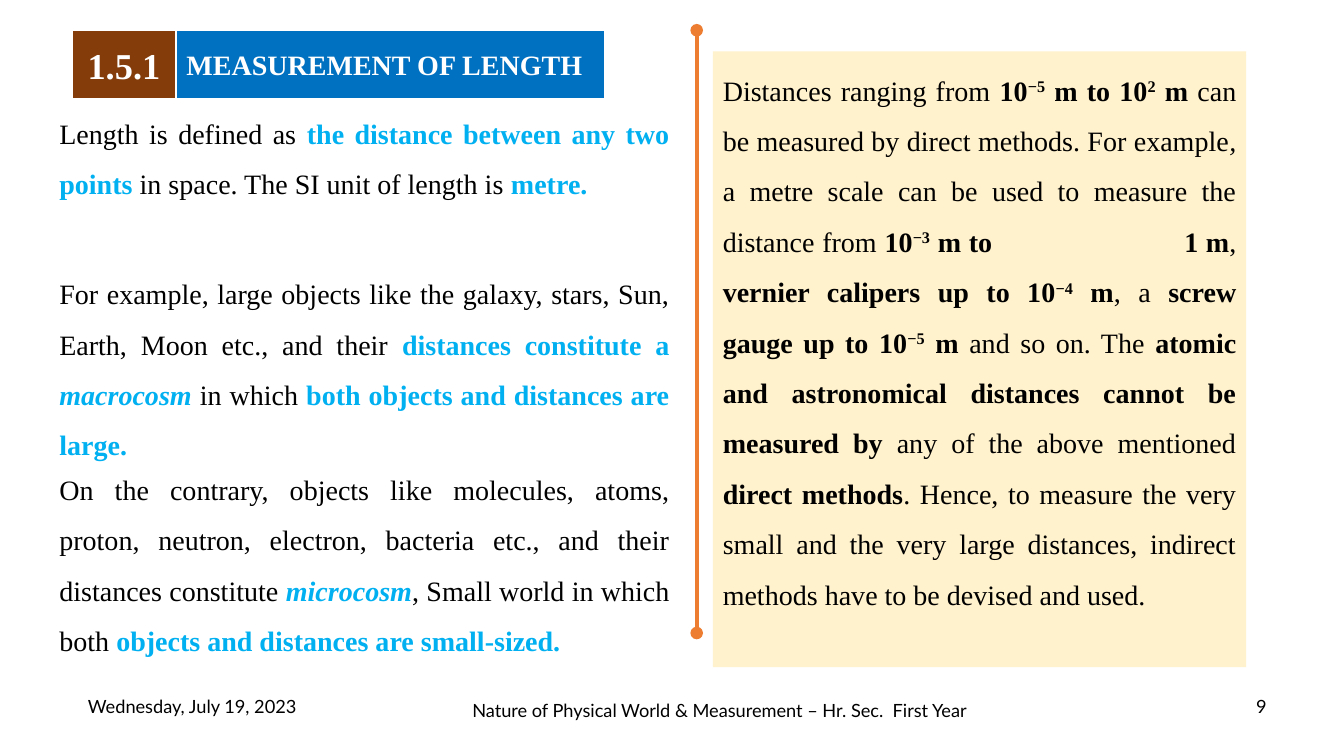
"""Build the slide on measurement of length."""
from lxml.etree import SubElement
from pptx import Presentation
from pptx.dml.color import RGBColor as RGB
from pptx.enum.shapes import MSO_CONNECTOR as Link, MSO_SHAPE as Shape
from pptx.enum.text import MSO_ANCHOR as Anchor, PP_ALIGN as Align
from pptx.oxml.ns import qn
from pptx.util import Inches, Pt

HUES = {"black": "000000", "white": "FFFFFF", "brown": "843C0B", "blue": "0070C0",
        "cyan": "00B0F0", "cream": "FFF2CC", "orange": "ED7D31"}
SERIF = "Times New Roman"


def hue(name):
    return RGB.from_string(HUES[name])


def write(shape, runs, size, face=SERIF, color="black", align=Align.JUSTIFY):
    """Fill a shape with runs marked b (bold), i (italic), c (cyan), s (superscript)."""
    para = shape.text_frame.paragraphs[0]
    para.alignment = align
    para.font.size, para.font.name = Pt(size), face
    para.font.color.rgb = hue(color)
    for text, marks in runs:
        run = para.add_run()
        run.text = text
        if "b" in marks:
            run.font.bold = True
        if "i" in marks:
            run.font.italic = True
        if "c" in marks:
            run.font.color.rgb = hue("cyan")
        if "s" in marks:
            run.font._element.set("baseline", "30000")
    return para


deck = Presentation()
deck.slide_width, deck.slide_height = Inches(13.33), Inches(7.5)
slide = deck.slides.add_slide(deck.slide_layouts[6])
shapes = slide.shapes

footer = [
    (0.71, 6.81, 2.39, "Wednesday, July 19, 2023"),
    (12.3, 6.81, 0.42, "9"),
    (4.55, 6.85, 5.17, "Nature of Physical World & Measurement – Hr. Sec.  First Year"),
]
for left, top, width, text in footer:
    box = shapes.add_textbox(Inches(left), Inches(top), Inches(width), Inches(0.4))
    box.text_frame.word_wrap = False
    box.text_frame.vertical_anchor = Anchor.MIDDLE
    write(box, [(text, "")], 13, "Lato", align=Align.CENTER)

rule = shapes.add_connector(Link.STRAIGHT, Inches(6.91), Inches(0.3), Inches(6.91), Inches(6.28))
rule.line.color.rgb = hue("orange")
rule.line.width = Pt(3)
line = rule.line._get_or_add_ln()
for end in ("a:headEnd", "a:tailEnd"):
    SubElement(line, qn(end), type="oval")
SubElement(rule._element.spPr, qn("a:effectLst"))

heading = [
    (0.71, 1.04, "brown", "1.5.1", 26, Align.CENTER),
    (1.75, 4.25, "blue", "MEASUREMENT OF LENGTH", 20, Align.LEFT),
]
for left, width, fill, text, size, align in heading:
    tile = shapes.add_shape(Shape.RECTANGLE, Inches(left), Inches(0.3), Inches(width), Inches(0.68))
    tile.shadow.inherit = False
    tile.fill.solid()
    tile.fill.fore_color.rgb = hue(fill)
    tile.line.color.rgb = hue("white")
    tile.line.width = Pt(1.5)
    write(tile, [(text, "b")], size, color="white", align=align)

notes = [
    (0.94, 1.62, [
        ("Length is defined as ", ""),
        ("the distance between any two points", "bc"),
        (" in space. The SI unit of length is ", ""),
        ("metre. ", "bc")]),
    (2.53, 2.12, [
        ("For example, large objects like the galaxy, stars, Sun, Earth, Moon etc., and their ", ""),
        ("distances constitute a ", "bc"),
        ("macrocosm ", "bic"),
        ("in which ", ""),
        ("both objects and distances are large. ", "bc")]),
    (4.47, 2.63, [
        ("On the contrary, objects like molecules, atoms, proton, neutron, electron, "
         "bacteria etc., and their distances constitute ", ""),
        ("microcosm", "bic"),
        (", Small world in which both ", ""),
        ("objects and distances are small-sized. ", "bc")]),
]
for top, height, runs in notes:
    box = shapes.add_textbox(Inches(0.49), Inches(top), Inches(6.25), Inches(height))
    box.text_frame.word_wrap = True
    write(box, runs, 20).line_spacing = 1.5

panel = shapes.add_shape(Shape.RECTANGLE, Inches(7.07), Inches(0.51), Inches(5.29), Inches(6.11))
panel.shadow.inherit = False
panel.fill.solid()
panel.fill.fore_color.rgb = hue("cream")
panel.line.fill.background()
panel.text_frame.word_wrap = True
panel.text_frame.vertical_anchor = Anchor.TOP
ranges = [
    ("Distances ranging from ", ""), ("10", "b"), ("−5", "bs"), (" m to 10", "b"),
    ("2", "bs"), (" m ", "b"),
    ("can be measured by direct methods. For example", ""), (", ", "i"),
    ("a metre scale can be used to measure the distance from ", ""),
    ("10", "b"), ("−3", "bs"), (" m to\t1 m", "b"), (", ", ""),
    ("vernier calipers up to 10", "b"), ("−4", "bs"), (" m", "b"), (", a ", ""),
    ("screw gauge up to 10", "b"), ("−5", "bs"), (" m ", "b"), ("and so on. The ", ""),
    ("atomic and astronomical distances cannot be measured by", "b"),
    (" any of the above mentioned ", ""), ("direct methods", "b"),
    (". Hence, to measure the very small and the very large distances, "
     "indirect methods have to be devised and used.", ""),
]
para = write(panel, ranges, 20)
para.line_spacing = 1.5
props = para._p.get_or_add_pPr()
tabs = SubElement(props, qn("a:tabLst"))
SubElement(tabs, qn("a:tab"), pos=str(Inches(4.55)), algn="l")
props.find(qn("a:defRPr")).addprevious(tabs)

deck.save("out.pptx")
